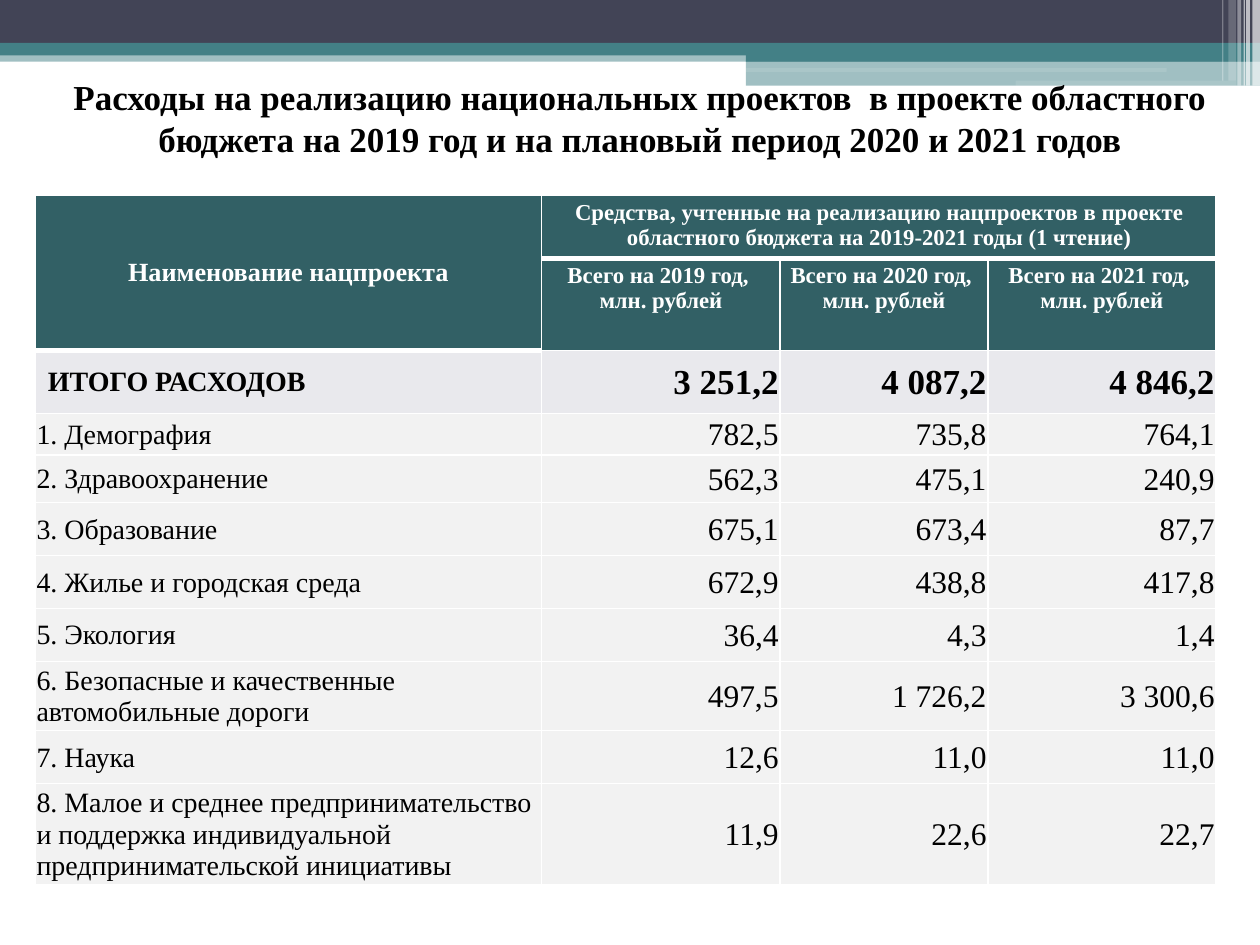
from lxml.etree import SubElement as Sub
from pptx import Presentation as Deck
from pptx.dml.color import RGBColor as Rgb
from pptx.enum.shapes import MSO_SHAPE as Form
from pptx.enum.text import MSO_ANCHOR as Anchor, MSO_AUTO_SIZE as Fit, PP_ALIGN as Align
from pptx.oxml.ns import qn
from pptx.util import Inches, Pt

FONT = "Times New Roman"
COLORS = {"navy": "424456", "teal": "438086", "white": "FFFFFF", "black": "000000",
          "head": "326065", "total": "E9E9ED", "body": "F2F2F2"}

# Top band: left, top, width, height, colour, opacity in percent
BANDS = [
    (0, 0.4, 10, 0.09, "teal", 50),
    (0, 0, 10, 0.34, "navy", 100),
    (0, 0.34, 10, 0.1, "teal", 100),
    (5.92, 0.39, 4.08, 0.1, "teal", 100),
    (5.92, 0.48, 4.08, 0.2, "teal", 50),
]
STREAKS = [(5.91, 0.54, 3.35, 0.03), (8.06, 0.64, 1.75, 0.04)]
# Vertical stripes: left, width, height, opacity
STRIPES = [(9.94, 0.06, 0.68, 65), (9.89, 0.03, 0.68, 65), (9.87, 0.01, 0.68, 60),
           (9.82, 0.03, 0.68, 40), (9.75, 0.06, 0.64, 20), (9.7, 0.01, 0.64, 30)]

TITLE = ("Расходы на реализацию национальных проектов  в проекте областного "
         "бюджета на 2019 год и на плановый период 2020 и 2021 годов")
CORNER = "Наименование нацпроекта"
GROUP = ("Средства, учтенные на реализацию нацпроектов в проекте областного "
         "бюджета на 2019-2021 годы (1 чтение)")
YEARS = (2019, 2020, 2021)
TOTAL = ("ИТОГО РАСХОДОВ", "3 251,2", "4 087,2", "4 846,2")
ITEMS = [
    ("1. Демография", "782,5", "735,8", "764,1"),
    ("2. Здравоохранение", "562,3", "475,1", "240,9"),
    ("3. Образование", "675,1", "673,4", "87,7"),
    ("4. Жилье и городская среда", "672,9", "438,8", "417,8"),
    ("5. Экология", "36,4", "4,3", "1,4"),
    ("6. Безопасные и качественные\nавтомобильные дороги", "497,5", "1 726,2", "3 300,6"),
    ("7. Наука", "12,6", "11,0", "11,0"),
    ("8. Малое и среднее предпринимательство\n"
     "и поддержка индивидуальной предпринимательской инициативы", "11,9", "22,6", "22,7"),
]
COLS = [4.02, 1.89, 1.65, 1.81]
ROWS = [0.5, 0.73, 0.5, 0.33, 0.38, 0.42, 0.42, 0.42, 0.55, 0.42, 0.8]

# Cell insets: left, top, right, bottom
WIDE = (0.1, 0.05, 0.1, 0.05)
SLIM = (0.02, 0.04, 0.02, 0.04)
TIGHT = (0.01, 0.01, 0.01, 0)
SIDES = ("left", "top", "right", "bottom")


def tint(name):
    return Rgb.from_string(COLORS[name])


def add_bar(slide, box, color, alpha=100, form=Form.RECTANGLE):
    bar = slide.shapes.add_shape(form, *map(Inches, box))
    bar.shadow.inherit = False
    bar.line.fill.background()
    bar.fill.solid()
    bar.fill.fore_color.rgb = tint(color)
    if alpha < 100:
        tone = bar.element.spPr.find(".//" + qn("a:srgbClr"))
        Sub(tone, qn("a:alpha"), val=str(alpha * 1000))


def set_text(frame, text, size, color, bold, align):
    frame.text = text
    look = {"name": FONT, "size": Pt(size), "bold": bold}
    for para in frame.paragraphs:
        para.alignment = align
        for run in para.runs:
            for key, value in look.items():
                setattr(run.font, key, value)
            run.font.color.rgb = tint(color)


def set_insets(target, insets):
    for side, gap in zip(SIDES, insets):
        setattr(target, "margin_" + side, Inches(gap))


def add_title(slide):
    title = slide.shapes.title
    place = {"left": 0, "top": 0.55, "width": 10.16, "height": 0.77}
    for key, value in place.items():
        setattr(title, key, Inches(value))
    frame = title.text_frame
    frame.word_wrap = True
    frame.auto_size = Fit.NONE
    frame.vertical_anchor = Anchor.TOP
    set_insets(frame, WIDE)
    set_text(frame, TITLE, 20, "black", True, Align.CENTER)
    # Bring the title in front of the bands
    title.element.getparent().append(title.element)


def add_edges(cell, row, col):
    """White rules; the ones under the two main headings are thicker."""
    top = 3 if (row == 1 and col) or (row == 2 and not col) else 1
    low = 3 if row == 0 or (row == 1 and not col) else 1
    props = cell._tc.get_or_add_tcPr()
    for tag, width in {"lnL": 1, "lnR": 1, "lnT": top, "lnB": low}.items():
        edge = Sub(props, qn("a:" + tag), w=str(Pt(width)))
        Sub(Sub(edge, qn("a:solidFill")), qn("a:srgbClr"), val=COLORS["white"])


def fill_cell(cell, text, size, color="black", bold=False, align=Align.LEFT,
              insets=TIGHT, anchor=Anchor.MIDDLE):
    set_insets(cell, insets)
    cell.vertical_anchor = anchor
    set_text(cell.text_frame, text, size, color, bold, align)


def add_grid(slide):
    frame = slide.shapes.add_table(len(ROWS), len(COLS), Inches(0.28), Inches(1.55),
                                   Inches(sum(COLS)), Inches(sum(ROWS)))
    grid = frame.table
    for col, width in zip(grid.columns, COLS):
        col.width = Inches(width)
    for row, height in zip(grid.rows, ROWS):
        row.height = Inches(height)

    # Borders and fills
    for r in range(len(ROWS)):
        for c in range(len(COLS)):
            cell = grid.cell(r, c)
            add_edges(cell, r, c)
            cell.fill.solid()
            cell.fill.fore_color.rgb = tint("head" if r < 2 else "total" if r == 2 else "body")

    # Headings
    grid.cell(0, 0).merge(grid.cell(1, 0))
    grid.cell(0, 1).merge(grid.cell(0, 3))
    head = {"color": "white", "bold": True, "align": Align.CENTER}
    slim = {**head, "insets": SLIM, "anchor": Anchor.TOP}
    fill_cell(grid.cell(0, 0), CORNER, 15, insets=WIDE, **head)
    fill_cell(grid.cell(0, 1), GROUP, 13, **slim)
    for c, year in enumerate(YEARS, 1):
        fill_cell(grid.cell(1, c), f"Всего на {year} год, \nмлн. рублей", 13, **slim)

    # Total and projects
    for r, (name, *sums) in enumerate([TOTAL, *ITEMS], 2):
        main = r == 2
        fill_cell(grid.cell(r, 0), name, 16, bold=main, insets=WIDE if main else TIGHT)
        for c, value in enumerate(sums, 1):
            fill_cell(grid.cell(r, c), value, 20 if main else 18, bold=main, align=Align.RIGHT)


def main():
    deck = Deck()
    deck.slide_width, deck.slide_height = Inches(10), Inches(7.5)
    slide = deck.slides.add_slide(deck.slide_layouts[5])
    for *box, color, alpha in BANDS:
        add_bar(slide, box, color, alpha)
    for box in STREAKS:
        add_bar(slide, box, "white", 11, Form.ROUNDED_RECTANGLE)
    for left, width, height, alpha in STRIPES:
        add_bar(slide, (left, 0, width, height), "white", alpha)
    add_title(slide)
    add_grid(slide)
    deck.save("out.pptx")


if __name__ == "__main__":
    main()
